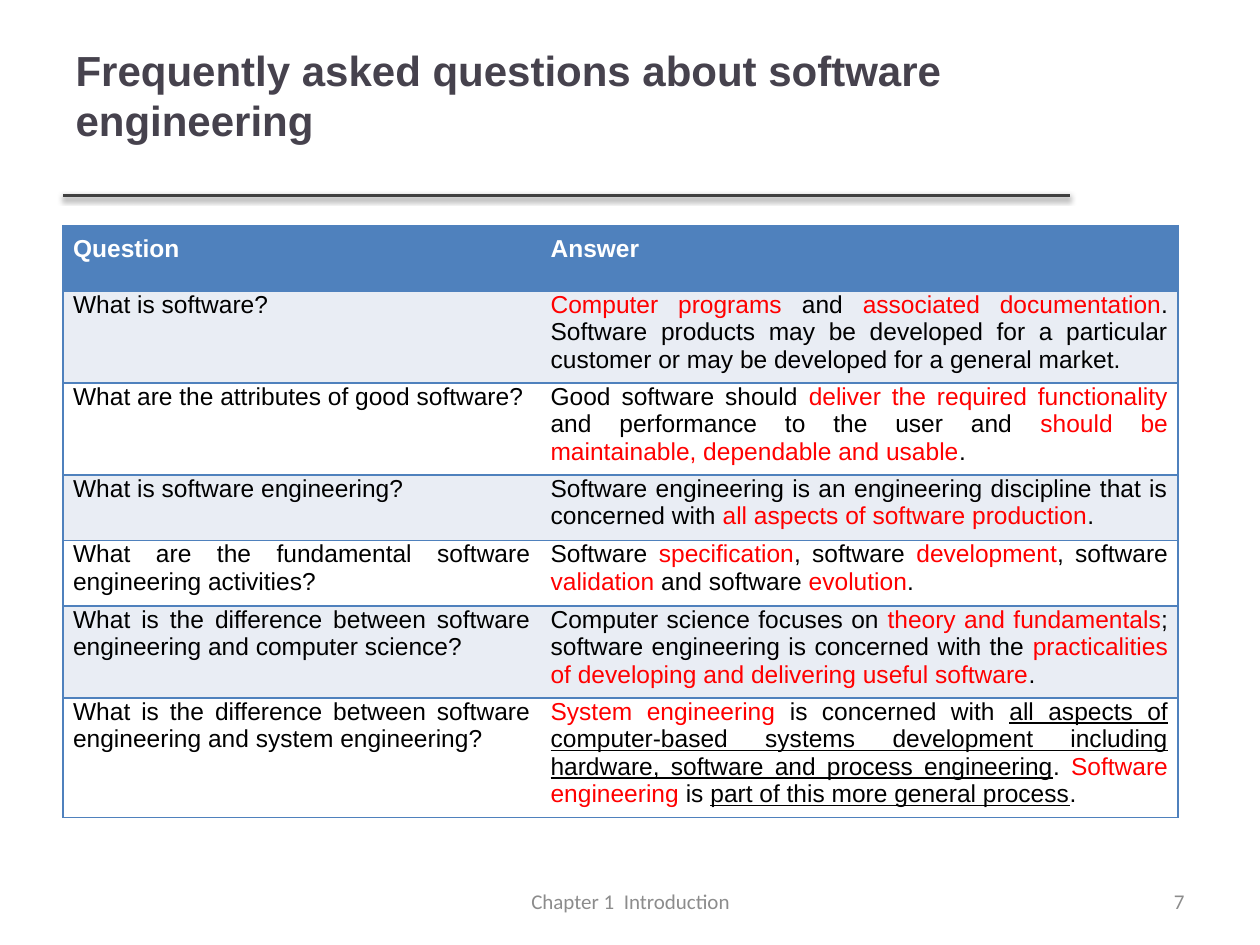
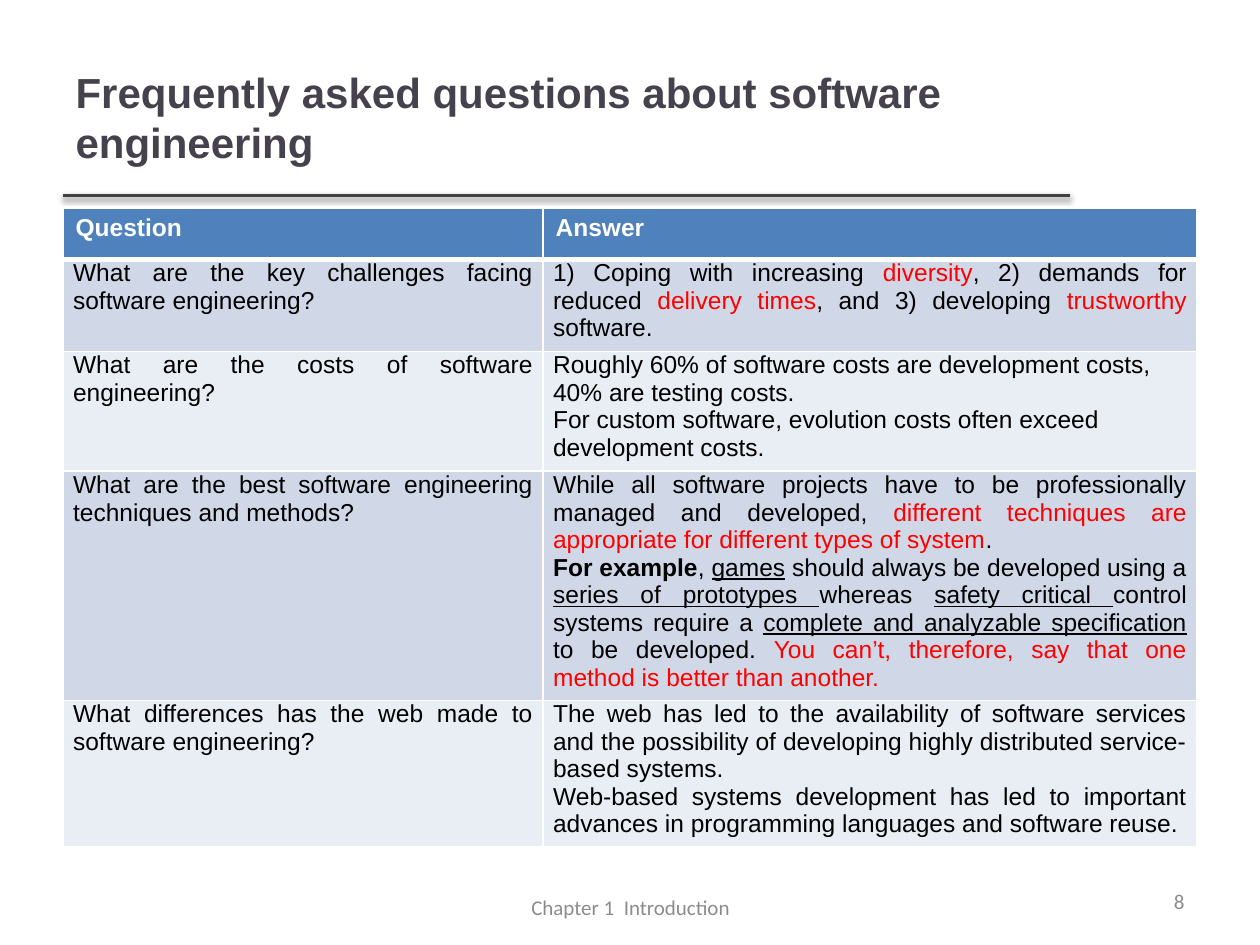
"""Build two slides of frequently asked questions about software engineering."""
from lxml import etree
from pptx import Presentation
from pptx.dml.color import RGBColor
from pptx.enum.shapes import MSO_CONNECTOR
from pptx.enum.text import MSO_ANCHOR, MSO_AUTO_SIZE, PP_ALIGN
from pptx.oxml.ns import qn
from pptx.util import Inches, Pt

LEFT, CENTER, RIGHT, JUSTIFY = PP_ALIGN.LEFT, PP_ALIGN.CENTER, PP_ALIGN.RIGHT, PP_ALIGN.JUSTIFY
TOP, MIDDLE = MSO_ANCHOR.TOP, MSO_ANCHOR.MIDDLE
STRAIGHT, NO_AUTOFIT = MSO_CONNECTOR.STRAIGHT, MSO_AUTO_SIZE.NONE
TITLE_ONLY = 5
PLAIN_TABLE_STYLE = "{2D5ABB26-0587-4C30-8999-92F81FD0307C}"

TITLE_COLOR, RULE_COLOR, FOOTER_COLOR = "46424D", "404040", "8C8C8C"
BLACK, WHITE, RED, BLUE = "000000", "FFFFFF", "FF0000", "4F81BD"
PALE, MID = "E9EDF4", "D0D8E8"
MARKS = {"*": "red", "_": "underline", "^": "bold"}

TITLE = "Frequently asked questions about software engineering"
FOOTER = "Chapter 1  Introduction"
HEADINGS = ("Question", "Answer")
BODY_MARGINS = (0.08, 0, 0.08, 0.07)

BASICS = [
    ("What is software?",
     "*Computer programs *and *associated documentation*. Software products may be developed "
     "for a particular customer or may be developed for a general market."),
    ("What are the attributes of good software?",
     "Good software should *deliver the required functionality *and performance to the user and "
     "*should be maintainable, dependable and usable*."),
    ("What is software engineering?",
     "Software engineering is an engineering discipline that is concerned with "
     "*all aspects of software production*."),
    ("What are the fundamental software engineering activities?",
     "Software *specification*, software *development*, software *validation* and software "
     "*evolution*."),
    ("What is the difference between software engineering and computer science?",
     "Computer science focuses on *theory and fundamentals*; software engineering is concerned "
     "with the *practicalities of developing and delivering useful software*."),
    ("What is the difference between software engineering and system engineering?",
     "*System engineering *is concerned with _all aspects of computer-based systems development "
     "including hardware, software and process engineering_. *Software engineering* is "
     "_part of this more general process_."),
]
PRACTICE = [
    ("What are the key challenges facing software engineering?",
     "1) Coping with increasing *diversity*, 2) demands for reduced *delivery times*, and "
     "3) developing *trustworthy* software."),
    ("What are the costs of software engineering?",
     "Roughly 60% of software costs are development costs, 40% are testing costs.\n"
     "For custom software, evolution costs often exceed development costs."),
    ("What are the best software engineering techniques and methods?",
     "While all software projects have to be professionally managed and developed, "
     "*different techniques are appropriate for different types of system*.\n"
     "^For example^, _games_ should always be developed using a _series of prototypes _whereas "
     "_safety critical _control systems require a _complete and analyzable specification _to be "
     "developed. *You can’t, therefore, say that one method is better than another.*"),
    ("What differences has the web made to software engineering?",
     "The web has led to the availability of software services and the possibility of developing "
     "highly distributed service-based systems.\n"
     "Web-based systems development has led to important advances in programming languages and "
     "software reuse."),
]
SLIDES = [
    dict(number=7, title_size=(8.41, 1.29), title_anchor=TOP, footer_top=6.95, rows=BASICS,
         table_top=1.79, columns=(3.79, 5.06), heights=(0.52, 0.73, 0.73, 0.52, 0.52, 0.73, 0.95),
         bands=(PALE, WHITE), line_color=BLUE, inner_lines=False, header_line=1,
         header_margins=(0.08, 0.08, 0.08, 0.08), header_align=JUSTIFY, left_answers=()),
    dict(number=8, title_size=(7.98, 1.25), title_anchor=MIDDLE, footer_top=7, rows=PRACTICE,
         table_top=1.65, columns=(3.81, 5.19), heights=(0.41, 0.73, 0.95, 1.82, 1.16),
         bands=(MID, PALE), line_color=WHITE, inner_lines=True, header_line=3,
         header_margins=(0.1, 0.05, 0.1, 0.05), header_align=LEFT, left_answers=(2,)),
]


def rgb(color):
    return RGBColor.from_string(color)


def split_marks(text):
    """Yield (piece, active mark) pairs of marked-up text."""
    piece, active = "", None
    for letter in text:
        if letter in MARKS:
            if piece:
                yield piece, active
            piece, active = "", None if active else MARKS[letter]
        else:
            piece += letter
    if piece:
        yield piece, active


def write(frame, text, size=14, font="Arial", color=BLACK, bold=False, align=LEFT):
    """Fill a text frame, one paragraph a line, with marked spans."""
    for index, line in enumerate(text.split("\n")):
        para = frame.add_paragraph() if index else frame.paragraphs[0]
        para.alignment = align
        for piece, mark in split_marks(line):
            span = para.add_run()
            span.text = piece
            span.font.size, span.font.name = Pt(size), font
            span.font.bold = bold or mark == "bold"
            span.font.underline = mark == "underline"
            span.font.color.rgb = rgb(RED if mark == "red" else color)


def add_title(page, size, anchor):
    title = page.shapes.title
    title.left, title.top = Inches(0.5), Inches(0.3)
    title.width, title.height = map(Inches, size)
    frame = title.text_frame
    frame.auto_size, frame.word_wrap, frame.vertical_anchor = NO_AUTOFIT, True, anchor
    write(frame, TITLE, size=24, color=TITLE_COLOR, bold=True)


def add_rule(page):
    """Draw the shadowed line under the title."""
    rule = page.shapes.add_connector(STRAIGHT, Inches(0.5), Inches(1.55), Inches(8.49), Inches(1.55))
    rule.line.color.rgb, rule.line.width = rgb(RULE_COLOR), Pt(2)
    effects = etree.SubElement(rule._element.spPr, qn("a:effectLst"))
    shadow = etree.SubElement(effects, qn("a:outerShdw"), blurRad=str(Pt(3.1)), dist=str(Pt(1.6)),
                              dir="5400000", rotWithShape="0")
    shade = etree.SubElement(shadow, qn("a:srgbClr"), val=BLACK)
    etree.SubElement(shade, qn("a:alpha"), val="38000")


def add_footer(page, text, left, top, width, align):
    box = page.shapes.add_textbox(Inches(left), Inches(top), Inches(width), Inches(0.4))
    box.text_frame.word_wrap, box.text_frame.vertical_anchor = True, MIDDLE
    write(box.text_frame, text, size=12, font="Calibri", color=FOOTER_COLOR, align=align)


def set_borders(cell, color, widths):
    """Draw the given sides of a cell; a side of width 0 stays clear."""
    properties = cell._tc.get_or_add_tcPr()
    for side in "LRTB":
        line = etree.SubElement(properties, qn("a:ln" + side), w=str(Pt(widths[side])))
        if widths[side]:
            fill = etree.SubElement(line, qn("a:solidFill"))
            etree.SubElement(fill, qn("a:srgbClr"), val=color)
        else:
            etree.SubElement(line, qn("a:noFill"))


def add_questions(page, plan):
    rows = [HEADINGS] + plan["rows"]
    columns, heights = plan["columns"], plan["heights"]
    holder = page.shapes.add_table(len(rows), len(columns), Inches(0.5), Inches(plan["table_top"]),
                                   Inches(sum(columns)), Inches(sum(heights)))
    table = holder.table
    table._tbl.tblPr.find(qn("a:tableStyleId")).text = PLAIN_TABLE_STYLE
    for column, width in zip(table.columns, columns):
        column.width = Inches(width)
    for row, height in zip(table.rows, heights):
        row.height = Inches(height)
    for row_index, texts in enumerate(rows):
        header = row_index == 0
        for column_index, text in enumerate(texts):
            cell = table.cell(row_index, column_index)
            margins = plan["header_margins"] if header else BODY_MARGINS
            (cell.margin_left, cell.margin_top,
             cell.margin_right, cell.margin_bottom) = map(Inches, margins)
            inner = int(plan["inner_lines"])
            set_borders(cell, plan["line_color"], {
                "L": inner if column_index else 1,
                "R": 1 if column_index else inner,
                "T": plan["header_line"] if row_index == 1 else 1,
                "B": plan["header_line"] if header else 1})
            cell.fill.solid()
            cell.fill.fore_color.rgb = rgb(BLUE if header else plan["bands"][(row_index - 1) % 2])
            if header:
                write(cell.text_frame, text, color=WHITE, bold=True, align=plan["header_align"])
            else:
                left = column_index == 1 and row_index in plan["left_answers"]
                write(cell.text_frame, text, align=LEFT if left else JUSTIFY)


def main():
    deck = Presentation()
    deck.slide_width, deck.slide_height = Inches(10), Inches(7.5)
    for plan in SLIDES:
        page = deck.slides.add_slide(deck.slide_layouts[TITLE_ONLY])
        add_rule(page)
        add_title(page, plan["title_size"], plan["title_anchor"])
        add_questions(page, plan)
        add_footer(page, FOOTER, 3.42, plan["footer_top"], 3.17, CENTER)
        add_footer(page, str(plan["number"]), 7.17, 6.95, 2.33, RIGHT)
    deck.save("out.pptx")


if __name__ == "__main__":
    main()
